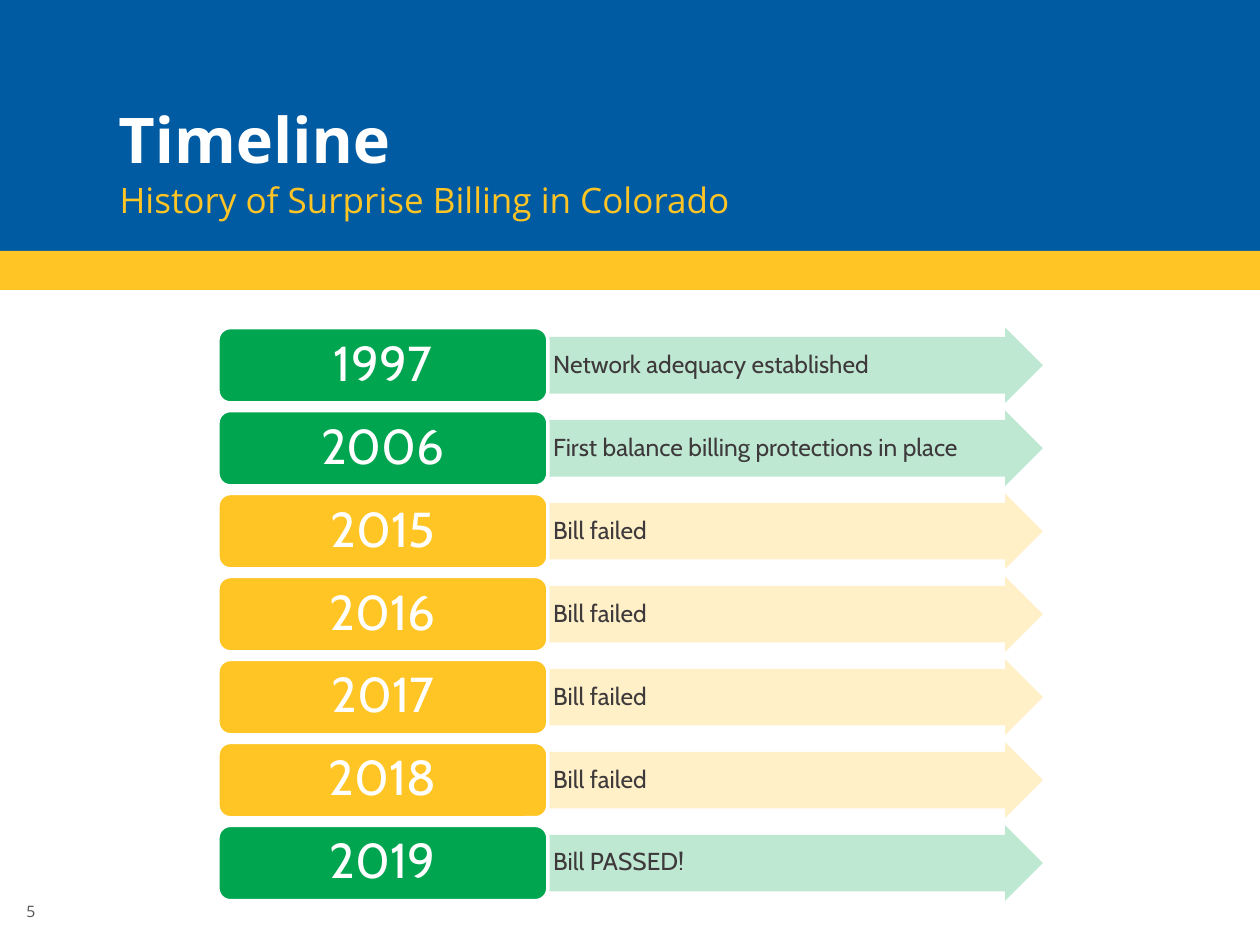
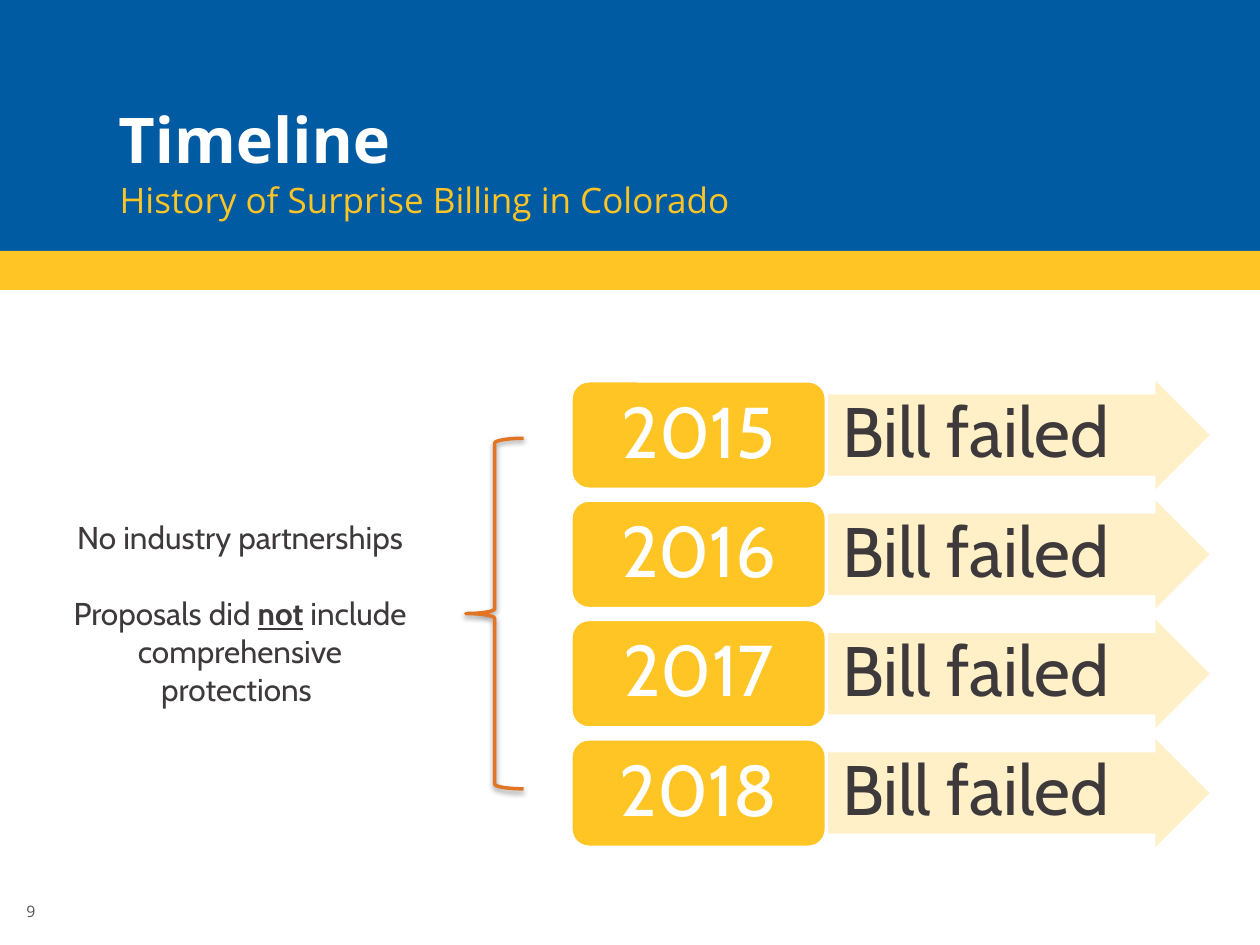
from lxml import etree
from pptx import Presentation
from pptx.dml.color import RGBColor
from pptx.enum import shapes, text
from pptx.oxml import parse_xml
from pptx.oxml.ns import nsdecls, qn
from pptx.util import Pt

BLUE, YELLOW, GREEN = "005BA2", "FFC525", "00A550"
WHITE, INK, GREY, ORANGE = "FFFFFF", "3E3A3B", "555555", "E27523"
HEAD_FONT, BODY_FONT = "Open Sans", "Cabin"
SHAPE, ALIGN, ANCHOR = shapes.MSO_SHAPE, text.PP_ALIGN, text.MSO_ANCHOR

TITLE = "Timeline"
SUBTITLE = "History of Surprise Billing in Colorado"
FAILED = [(str(year), "Bill failed", YELLOW) for year in range(2015, 2019)]
HISTORY = [
    ("1997", "Network adequacy established", GREEN),
    ("2006", "First balance billing protections in place", GREEN),
    *FAILED,
    ("2019", "Bill PASSED!", GREEN),
]
# Each paragraph is a list of (words, emphasized)
REASONS = [
    [("No industry partnerships", False)],
    [("Proposals did ", False), ("not", True),
     (" include comprehensive protections ", False)],
]


def rgb(hex_color):
    return RGBColor.from_string(hex_color)


def set_font(p, name, size, color, bold=False):
    p.font.name, p.font.size, p.font.bold = name, Pt(size), bold
    p.font.color.rgb = rgb(color)


def set_frame(tf, anchor, inset=0, left=None, wrap=True):
    tf.word_wrap, tf.vertical_anchor = wrap, anchor
    tf.margin_top = tf.margin_right = tf.margin_bottom = Pt(inset)
    tf.margin_left = Pt(inset if left is None else left)


def add_shape(s, kind, box, fill=None, alpha=None, line=None):
    sp = s.shapes.add_shape(kind, *map(Pt, box))
    sp.shadow.inherit = False
    if fill:
        sp.fill.solid()
        sp.fill.fore_color.rgb = rgb(fill)
        if alpha:
            color = sp.fill._xPr.find(f".//{qn('a:srgbClr')}")
            etree.SubElement(color, qn("a:alpha"), val=str(alpha * 1000))
    else:
        sp.fill.background()
    if line:
        sp.line.color.rgb, sp.line.width = rgb(line), Pt(2)
    else:
        sp.line.fill.background()
    return sp


def add_text(s, box, words, font, anchor=ANCHOR.TOP, **frame):
    tf = s.shapes.add_textbox(*map(Pt, box)).text_frame
    set_frame(tf, anchor, **frame)
    p = tf.paragraphs[0]
    p.text = words
    set_font(p, *font)
    return p


def add_base(prs, number):
    """A slide with the header bands, title, subtitle and page number."""
    s = prs.slides.add_slide(prs.slide_layouts[6])
    add_shape(s, SHAPE.RECTANGLE, (0, 0, 720, 147), BLUE)
    add_shape(s, SHAPE.RECTANGLE, (0, 143.4, 720, 22.3), YELLOW)
    add_text(s, (8, 512, 26.6, 18), str(number), (HEAD_FONT, 9, GREY),
             inset=3.6, left=7.2, wrap=False)
    add_text(s, (68.4, 102.2, 581, 44), SUBTITLE, (HEAD_FONT, 20, YELLOW))
    title = add_text(s, (67.7, 2.2, 581.8, 98.6), TITLE,
                     (HEAD_FONT, 36, WHITE, True), ANCHOR.BOTTOM)
    title.line_spacing = Pt(35.2)
    return s


def add_label(sp, words, size, color, align, left=0):
    set_frame(sp.text_frame, ANCHOR.MIDDLE, left=left)
    p = sp.text_frame.paragraphs[0]
    p.text, p.alignment, p.line_spacing = words, align, 0.9
    set_font(p, BODY_FONT, size, color)


def add_timeline(s, rows, left, top, width, height, year_size, event_size, indent):
    """Year boxes take 40% of the width, event arrows the rest."""
    year_width = width * 0.4
    for i, (year, event, color) in enumerate(rows):
        y = top + i * height * 1.1
        arrow = add_shape(s, SHAPE.RIGHT_ARROW,
                          (left + year_width, y, width - year_width, height),
                          color, alpha=25)
        arrow.adjustments[0], arrow.adjustments[1] = 0.75, 0.5
        add_label(arrow, event, event_size, INK, ALIGN.LEFT, indent)
        box = add_shape(s, SHAPE.ROUNDED_RECTANGLE,
                        (left, y, year_width, height), color, line=WHITE)
        add_label(box, year, year_size, WHITE, ALIGN.CENTER)


def add_reasons(s):
    tf = s.shapes.add_textbox(Pt(29.5), Pt(292.3), Pt(215.3), Pt(116.6)).text_frame
    tf.word_wrap = True
    for i, runs in enumerate(REASONS):
        p = tf.add_paragraph() if i else tf.paragraphs[0]
        p.alignment = ALIGN.CENTER
        if i:
            p.space_before = Pt(22)
        set_font(p, BODY_FONT, 18, INK)
        for words, emphasized in runs:
            r = p.add_run()
            r.text = words
            if emphasized:
                r.font.bold = r.font.underline = True


def add_brace(s):
    brace = add_shape(s, SHAPE.LEFT_BRACE, (266.2, 250.5, 33, 200.3), line=ORANGE)
    effects = brace._element.spPr.find(qn("a:effectLst"))
    effects.append(parse_xml(
        f'<a:outerShdw {nsdecls("a")} blurRad="{Pt(3.1)}" dist="{Pt(1.6)}" '
        'dir="5400000" rotWithShape="0"><a:srgbClr val="000000">'
        '<a:alpha val="38000"/></a:srgbClr></a:outerShdw>'))


def main():
    prs = Presentation()
    prs.slide_width, prs.slide_height = Pt(720), Pt(540)

    # Full history
    s = add_base(prs, 5)
    add_timeline(s, HISTORY, 124.5, 187.2, 471.5, 43.1, 28, 14, 3)

    # Failed bills and the reasons
    s = add_base(prs, 9)
    add_timeline(s, FAILED, 326.2, 217.6, 365, 62, 41, 40, 9)
    add_reasons(s)
    add_brace(s)

    prs.save("out.pptx")


if __name__ == "__main__":
    main()
